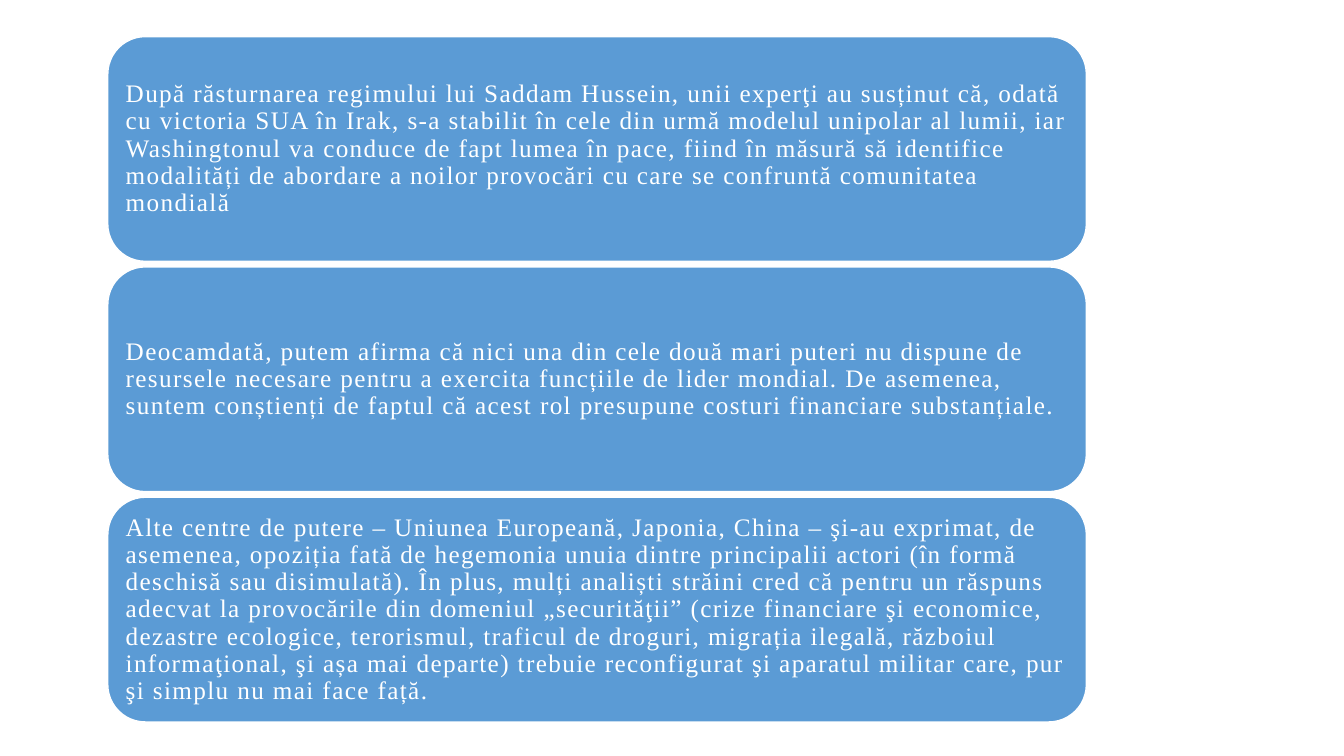
from pptx import Presentation
from pptx.dml.color import RGBColor
from pptx.enum.shapes import MSO_SHAPE
from pptx.enum.text import MSO_ANCHOR, PP_ALIGN
from pptx.util import Pt

ROUND = MSO_SHAPE.ROUNDED_RECTANGLE
MIDDLE = MSO_ANCHOR.MIDDLE
LEFT = PP_ALIGN.LEFT
COLORS = {"panel": "5B9BD5", "white": "FFFFFF"}
FONT = "Times New Roman"
POINTS = [
    "După răsturnarea regimului lui Saddam Hussein, unii experţi au susținut că, "
    "odată cu victoria SUA în Irak, s-a stabilit în cele din urmă modelul unipolar "
    "al lumii, iar Washingtonul va conduce de fapt lumea în pace, fiind în măsură "
    "să identifice modalități de abordare a noilor provocări cu care se confruntă "
    "comunitatea mondială",
    "Deocamdată, putem afirma că nici una din cele două mari puteri nu dispune de "
    "resursele necesare pentru a exercita funcțiile de lider mondial. De asemenea, "
    "suntem conștienți de faptul că acest rol presupune costuri financiare "
    "substanțiale.",
    "Alte centre de putere – Uniunea Europeană, Japonia, China – şi-au exprimat, "
    "de asemenea, opoziția fată de hegemonia unuia dintre principalii actori (în "
    "formă deschisă sau disimulată). În plus, mulți analiști străini cred că pentru "
    "un răspuns adecvat la provocările din domeniul „securităţii” (crize financiare "
    "şi economice, dezastre ecologice, terorismul, traficul de droguri, migrația "
    "ilegală, războiul informaţional, şi așa mai departe) trebuie reconfigurat şi "
    "aparatul militar care, pur şi simplu nu mai face față.",
]


def color(name):
    """Return the named colour."""
    return RGBColor.from_string(COLORS[name])


def add_panel(slide, text, left, top, width, height):
    """Draw one rounded panel with its text."""
    panel = slide.shapes.add_shape(ROUND, Pt(left), Pt(top), Pt(width), Pt(height))
    panel.shadow.inherit = False
    panel.fill.solid()
    panel.fill.fore_color.rgb = color("panel")
    panel.line.color.rgb = color("white")
    panel.line.width = Pt(1)

    frame = panel.text_frame
    frame.word_wrap = True
    frame.vertical_anchor = MIDDLE
    frame.margin_left = frame.margin_right = Pt(5)
    frame.margin_top = frame.margin_bottom = Pt(5)

    para = frame.paragraphs[0]
    para.alignment = LEFT
    para.line_spacing = 0.9
    para.font.name = FONT
    para.font.size = Pt(18)
    para.font.color.rgb = color("white")
    run = para.add_run()
    run.text = text
    run._r.get_or_add_rPr().set("spc", "100")


def add_stack(slide, texts, left, top, width, height, gap):
    """Stack equal panels down the given box."""
    step = (height + gap) / len(texts)
    for row, text in enumerate(texts):
        add_panel(slide, text, left, top + row * step, width, step - gap)


def main():
    """Build and save the slide."""
    deck = Presentation()
    deck.slide_width = Pt(960)
    deck.slide_height = Pt(540)
    slide = deck.slides.add_slide(deck.slide_layouts[6])
    add_stack(slide, POINTS, left=77, top=26.2, width=699, height=489.5, gap=4)
    deck.save("out.pptx")


if __name__ == "__main__":
    main()
